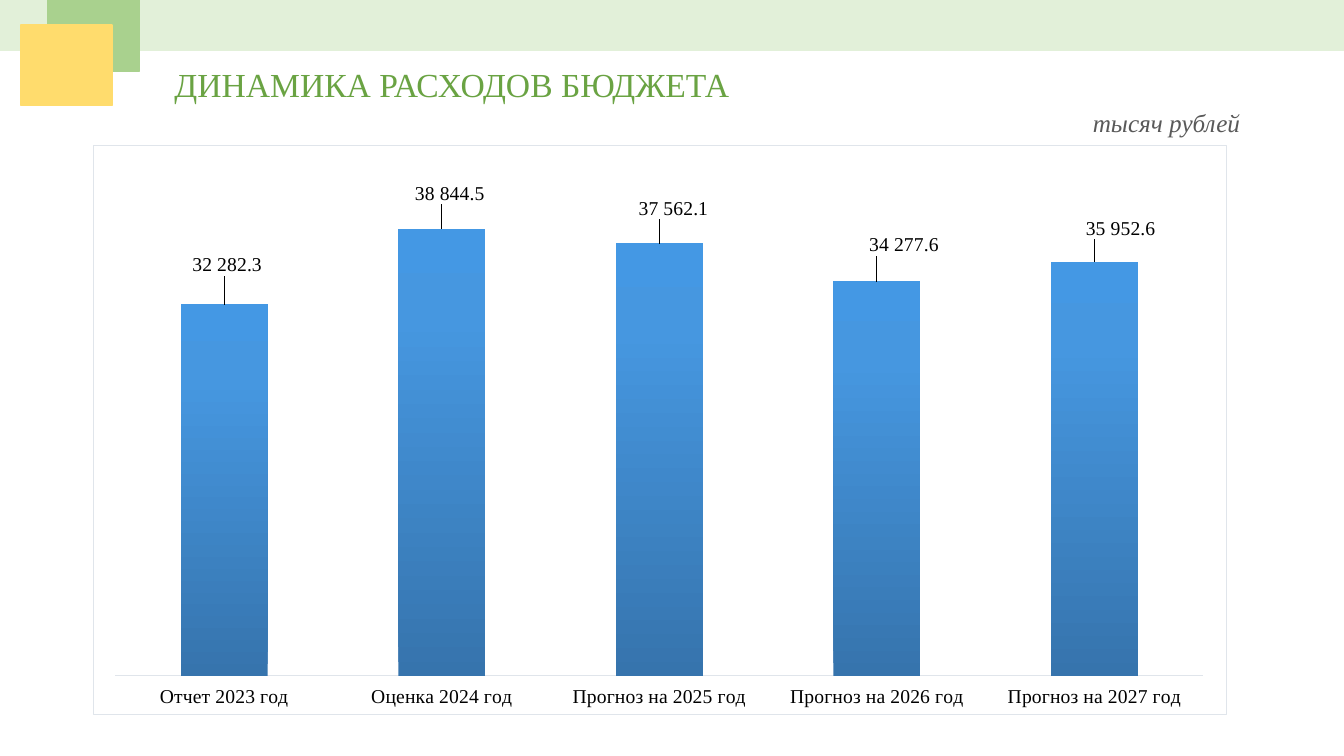
"""Build the slide on budget expenditure dynamics."""
from dataclasses import dataclass

from lxml.etree import SubElement
from pptx import Presentation
from pptx.chart.chart import Chart
from pptx.chart.data import CategoryChartData
from pptx.dml.color import RGBColor
from pptx.enum.chart import XL_CHART_TYPE, XL_LABEL_POSITION, XL_TICK_LABEL_POSITION, XL_TICK_MARK
from pptx.enum.shapes import MSO_SHAPE
from pptx.enum.text import MSO_ANCHOR, PP_ALIGN
from pptx.oxml import parse_xml
from pptx.oxml.ns import nsdecls, qn
from pptx.slide import Slide
from pptx.text.text import Font, TextFrame
from pptx.util import Inches, Pt


@dataclass(frozen=True)
class Theme:
    font: str = "Times New Roman"
    title: str = "6AA343"
    unit: str = "595959"
    label: str = "000000"
    paper: str = "FFFFFF"
    rule: str = "E0E5EB"
    band: str = "E2F0D9"
    green: str = "A9D18E"
    yellow: str = "FFDC6D"
    gradient: tuple[tuple[int, str], ...] = ((0, "3674AD"), (80, "4697E0"), (100, "4498E4"))
    title_size: int = 24
    unit_size: int = 18
    chart_size: int = 14
    rule_width: float = 0.75


@dataclass(frozen=True)
class Box:
    left: float
    top: float
    width: float
    height: float

    def emu(self) -> tuple[int, int, int, int]:
        return Inches(self.left), Inches(self.top), Inches(self.width), Inches(self.height)


@dataclass(frozen=True)
class Block:
    box: Box
    color: str


@dataclass(frozen=True)
class Year:
    name: str
    spending: float
    label_dx: float
    label_dy: float


THEME = Theme()
NUMBER_FORMAT = r"#\ ##0.0"
AXIS_MAX = 45000
TITLE_BOX = Box(1.63, 0.58, 5.85, 0.5)
UNIT_BOX = Box(10.74, 1.02, 1.68, 0.4)
CHART_BOX = Box(0.92, 1.44, 11.25, 5.65)
PLOT_BOX = Box(0.22, 0.12, 10.8, 5.15)
BLOCKS = (
    Block(Box(0, 0, 13.33, 0.5), THEME.band),
    Block(Box(0.47, 0, 0.91, 0.71), THEME.green),
    Block(Box(0.21, 0.25, 0.9, 0.8), THEME.yellow),
)
YEARS = (
    Year("Отчет 2023 год", 32282.3, 0.03, -0.24),
    Year("Оценка 2024 год", 38844.5, 0.08, -0.2),
    Year("Прогноз на 2025 год", 37562.1, 0.14, -0.2),
    Year("Прогноз на 2026 год", 34277.6, 0.27, -0.21),
    Year("Прогноз на 2027 год", 35952.6, 0.26, -0.18),
)


def set_font(font: Font, size: int, color: str) -> None:
    font.name = THEME.font
    font.size = Pt(size)
    font.color.rgb = RGBColor.from_string(color)


def write_line(tf: TextFrame, text: str, size: int, color: str, italic: bool = False) -> None:
    tf.word_wrap = False
    tf.vertical_anchor = MSO_ANCHOR.TOP
    p = tf.paragraphs[0]
    p.text = text
    p.alignment = PP_ALIGN.LEFT
    set_font(p.font, size, color)
    p.font.italic = italic


def add_block(s: Slide, block: Block) -> None:
    sp = s.shapes.add_shape(MSO_SHAPE.RECTANGLE, *block.box.emu())
    sp.shadow.inherit = False
    sp.fill.solid()
    sp.fill.fore_color.rgb = RGBColor.from_string(block.color)
    sp.line.color.rgb = RGBColor.from_string(block.color)
    sp.line.width = Pt(1)


def manual_layout(**settings: str | float):
    layout = parse_xml(f"<c:layout {nsdecls('c')}/>")
    manual = SubElement(layout, qn("c:manualLayout"))
    for name, value in settings.items():
        SubElement(manual, qn(f"c:{name}")).set("val", str(value))
    return layout


def frame_chart(chart: Chart) -> None:
    area = parse_xml(
        f"<c:spPr {nsdecls('c', 'a')}>"
        f'<a:solidFill><a:srgbClr val="{THEME.paper}"/></a:solidFill>'
        f'<a:ln w="{Pt(THEME.rule_width)}"><a:solidFill><a:srgbClr val="{THEME.rule}"/></a:solidFill></a:ln>'
        "</c:spPr>"
    )
    chart._chartSpace.find(qn("c:chart")).addnext(area)
    plot_area = chart._chartSpace.find(f".//{qn('c:plotArea')}")
    for old in plot_area.findall(qn("c:layout")):
        plot_area.remove(old)
    plot_area.insert(0, manual_layout(
        layoutTarget="inner", xMode="edge", yMode="edge",
        x=PLOT_BOX.left / CHART_BOX.width, y=PLOT_BOX.top / CHART_BOX.height,
        w=PLOT_BOX.width / CHART_BOX.width, h=PLOT_BOX.height / CHART_BOX.height,
    ))


def style_axes(chart: Chart) -> None:
    axis = chart.category_axis
    axis.major_tick_mark = axis.minor_tick_mark = XL_TICK_MARK.NONE
    axis.tick_label_position = XL_TICK_LABEL_POSITION.LOW
    axis.format.line.color.rgb = RGBColor.from_string(THEME.rule)
    axis.format.line.width = Pt(THEME.rule_width)
    values = chart.value_axis
    values.minimum_scale, values.maximum_scale = 0, AXIS_MAX
    values.has_major_gridlines = False
    values.visible = False


def style_bars(chart: Chart) -> None:
    plot = chart.plots[0]
    plot.gap_width = 150
    plot.vary_by_categories = False
    series = plot.series[0]
    series.invert_if_negative = False
    stops = "".join(
        f'<a:gs pos="{pos * 1000}"><a:srgbClr val="{color}"/></a:gs>' for pos, color in THEME.gradient
    )
    series.format.fill.background()
    no_fill = series._element.find(f"{qn('c:spPr')}/{qn('a:noFill')}")
    no_fill.getparent().replace(no_fill, parse_xml(
        f"<a:gradFill {nsdecls('a')}><a:gsLst>{stops}</a:gsLst>"
        '<a:lin ang="16200000" scaled="0"/></a:gradFill>'
    ))


def place_labels(chart: Chart) -> None:
    series = chart.plots[0].series[0]
    labels = series.data_labels
    labels.show_value = True
    labels.number_format = NUMBER_FORMAT
    labels.number_format_is_linked = False
    set_font(labels.font, THEME.chart_size, THEME.label)
    for i in range(len(YEARS)):
        label = series.points[i].data_label
        label.position = XL_LABEL_POSITION.OUTSIDE_END
        set_font(label.font, THEME.chart_size, THEME.label)
    for year, element in zip(YEARS, series._element.iter(qn("c:dLbl"))):
        element.insert(1, manual_layout(
            x=year.label_dx / CHART_BOX.width, y=year.label_dy / CHART_BOX.height,
        ))
        element.insert(2, parse_xml(
            f'<c:numFmt {nsdecls("c")} formatCode="{NUMBER_FORMAT}" sourceLinked="0"/>'
        ))


def add_spending_chart(s: Slide) -> None:
    data = CategoryChartData(number_format=NUMBER_FORMAT)
    data.categories = [year.name for year in YEARS]
    data.add_series("Series 1", [year.spending for year in YEARS])
    chart = s.shapes.add_chart(XL_CHART_TYPE.COLUMN_CLUSTERED, *CHART_BOX.emu(), data).chart
    chart.has_title = chart.has_legend = False
    set_font(chart.font, THEME.chart_size, THEME.label)
    frame_chart(chart)
    style_axes(chart)
    style_bars(chart)
    place_labels(chart)


def main() -> None:
    prs = Presentation()
    prs.slide_width, prs.slide_height = Inches(13.33), Inches(7.5)
    s = prs.slides.add_slide(prs.slide_layouts[5])
    title = s.shapes.title
    title.left, title.top, title.width, title.height = TITLE_BOX.emu()
    write_line(title.text_frame, "ДИНАМИКА РАСХОДОВ БЮДЖЕТА", THEME.title_size, THEME.title)
    for block in BLOCKS:
        add_block(s, block)
    unit = s.shapes.add_textbox(*UNIT_BOX.emu())
    write_line(unit.text_frame, "тысяч рублей", THEME.unit_size, THEME.unit, italic=True)
    add_spending_chart(s)
    prs.save("out.pptx")


if __name__ == "__main__":
    main()
